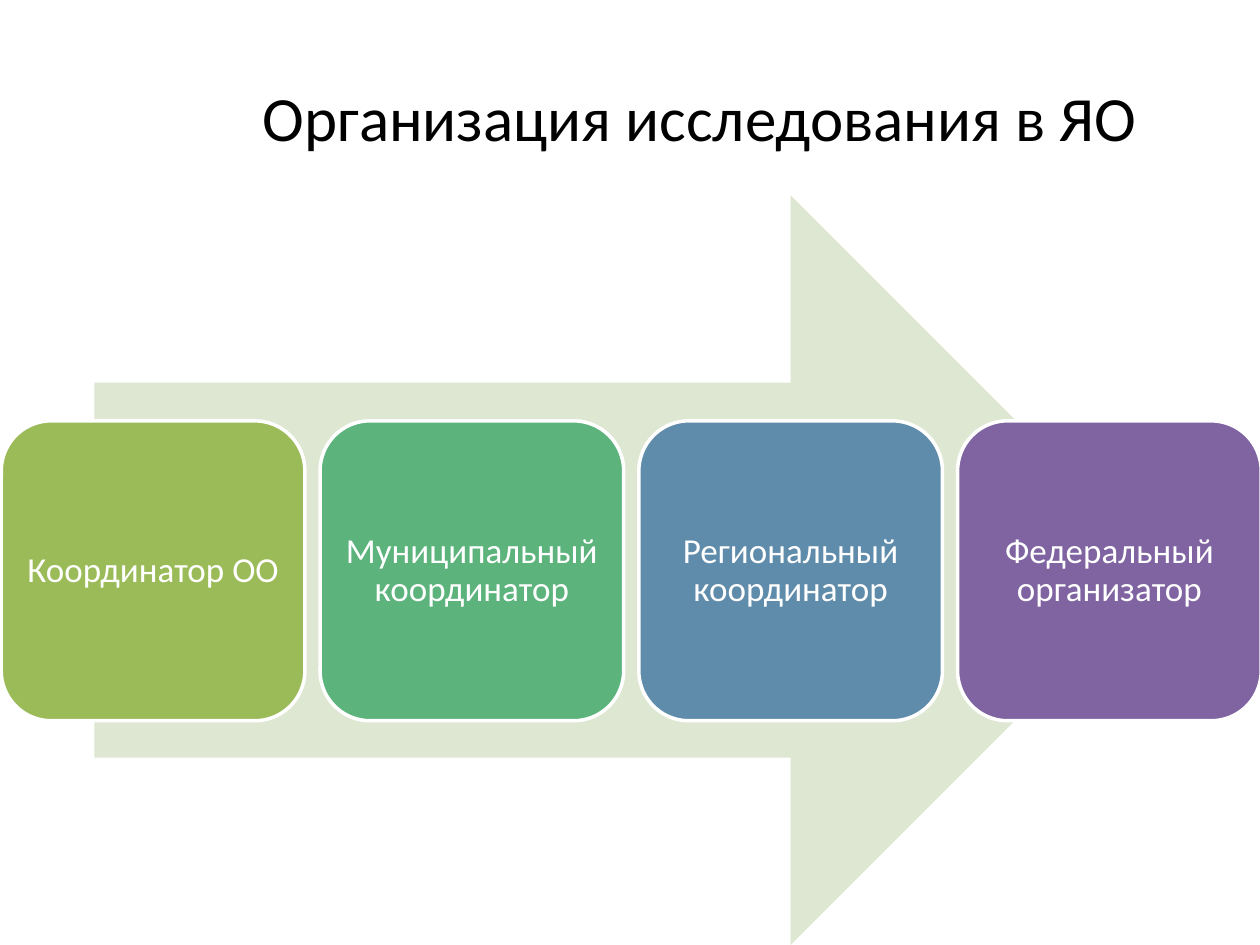
from pptx import Presentation
from pptx.dml.color import RGBColor
from pptx.enum.shapes import MSO_SHAPE
from pptx.enum.text import MSO_ANCHOR, PP_ALIGN
from pptx.util import Inches, Pt


def rgb(value):
    return RGBColor.from_string(value)


class Deck:
    font = "Calibri"
    white = "FFFFFF"
    black = "000000"

    def __init__(self, width, height):
        self.prs = Presentation()
        self.prs.slide_width = Inches(width)
        self.prs.slide_height = Inches(height)
        self.s = self.prs.slides.add_slide(self.prs.slide_layouts[6])

    def label(self, sp, text, size, color, spacing=1.0):
        tf = sp.text_frame
        tf.word_wrap = True
        tf.vertical_anchor = MSO_ANCHOR.MIDDLE
        p = tf.paragraphs[0]
        p.alignment = PP_ALIGN.CENTER
        p.line_spacing = spacing
        r = p.add_run()
        r.text = text
        r.font.name = self.font
        r.font.size = Pt(size)
        r.font.color.rgb = rgb(color)

    def title(self, text, *box):
        sp = self.s.shapes.add_textbox(*map(Inches, box))
        self.label(sp, text, 36, self.black)

    def shape(self, kind, fill, *box):
        sp = self.s.shapes.add_shape(kind, *map(Inches, box))
        sp.shadow.inherit = False
        sp.fill.solid()
        sp.fill.fore_color.rgb = rgb(fill)
        sp.line.fill.background()
        return sp

    def arrow(self, fill, *box):
        self.shape(MSO_SHAPE.RIGHT_ARROW, fill, *box)

    def card(self, text, fill, *box):
        sp = self.shape(MSO_SHAPE.ROUNDED_RECTANGLE, fill, *box)
        sp.line.color.rgb = rgb(self.white)
        sp.line.width = Pt(2)
        tf = sp.text_frame
        tf.margin_left = tf.margin_right = Inches(0.08)
        tf.margin_top = tf.margin_bottom = Inches(0.08)
        self.label(sp, text, 20, self.white, 0.9)


def main():
    deck = Deck(10, 7.5)
    deck.title("Организация исследования в ЯО", 1.61, 0.3, 7.89, 1.25)
    deck.arrow("DEE7D1", 0.75, 1.55, 8.5, 5.95)

    roles = [
        ("Координатор ОО", "9BBB59"),
        ("Муниципальный координатор", "5CB37C"),
        ("Региональный координатор", "608CAB"),
        ("Федеральный организатор", "8064A2"),
    ]
    width, gap = 2.41, 0.12
    for i, (role, fill) in enumerate(roles):
        deck.card(role, fill, 0.01 + i * (width + gap), 3.34, width, 2.38)

    deck.prs.save("out.pptx")


if __name__ == "__main__":
    main()
